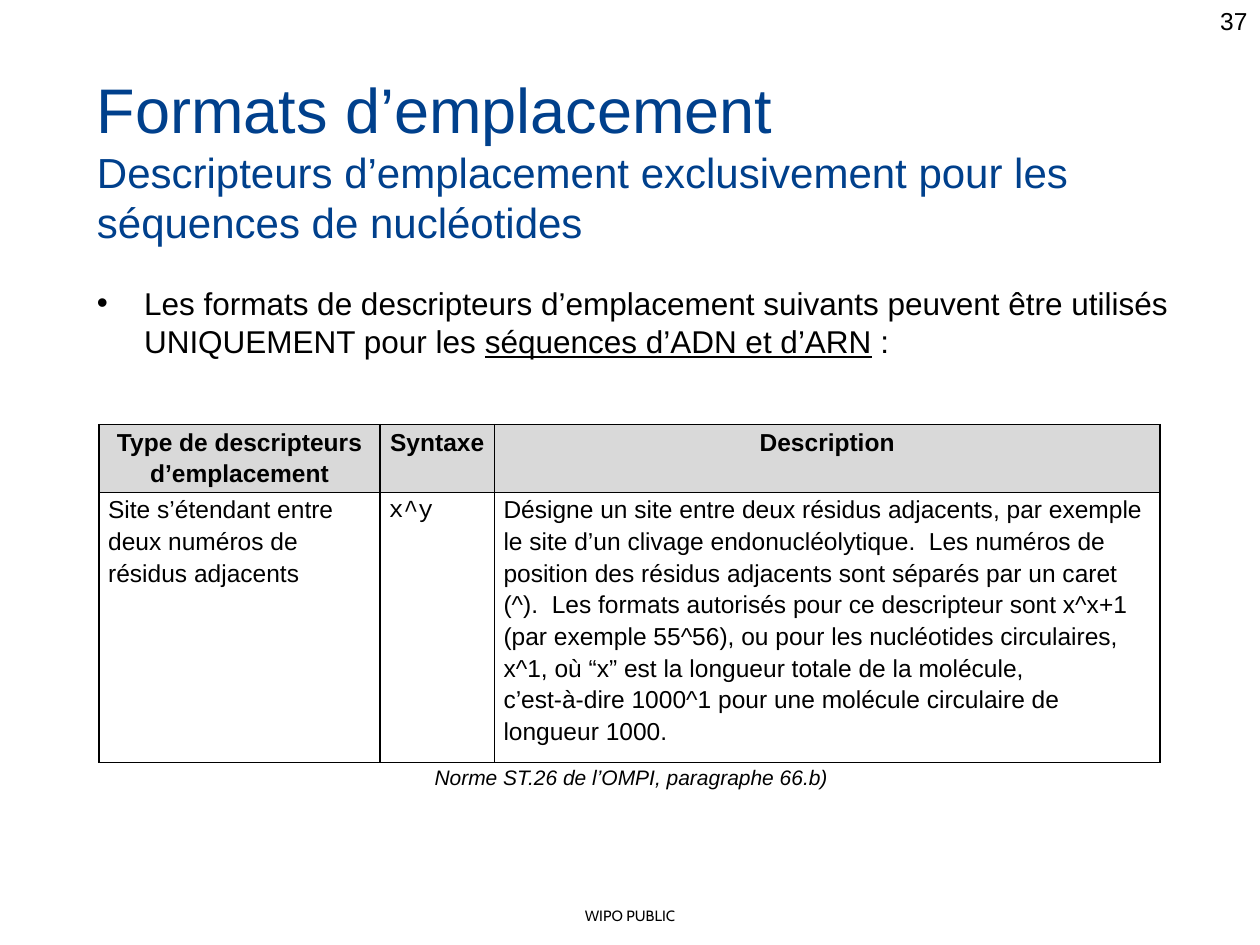
import pptx
import pptx.util
import pptx.dml.color
import pptx.enum.text
import pptx.oxml
import pptx.oxml.ns
from lxml import etree

Cm = pptx.util.Cm
Pt = pptx.util.Pt
ALIGN = pptx.enum.text.PP_ALIGN
ANCHOR = pptx.enum.text.MSO_ANCHOR

HEADINGS = ["Type de descripteurs d’emplacement", "Syntaxe", "Description"]
DETAILS = [
    "Site s’étendant entre deux numéros de résidus adjacents",
    "x^y",
    "Désigne un site entre deux résidus adjacents, par exemple le site d’un clivage "
    "endonucléolytique.  Les numéros de position des résidus adjacents sont séparés par "
    "un caret (^).  Les formats autorisés pour ce descripteur sont x^x+1 (par exemple "
    "55^56), ou pour les nucléotides circulaires, x^1, où “x” est la longueur totale de "
    "la molécule, c’est‑à‑dire 1000^1 pour une molécule circulaire de longueur 1000.",
]


def color(value):
    """Return the colour for a hex string."""
    return pptx.dml.color.RGBColor.from_string(value)


def style(paragraph, size, name="Arial", ink="000000", align=ALIGN.LEFT):
    """Set the font and alignment of a paragraph and return its font."""
    paragraph.alignment = align
    paragraph.space_before = Pt(0)
    font = paragraph.font
    font.size, font.name = Pt(size), name
    font.color.rgb = color(ink)
    return font


def place(shape, box):
    """Move a shape to a box and anchor its wrapped text at the top."""
    shape.left, shape.top, shape.width, shape.height = (Cm(length) for length in box)
    frame = shape.text_frame
    frame.word_wrap = True
    frame.auto_size = pptx.enum.text.MSO_AUTO_SIZE.NONE
    frame.vertical_anchor = ANCHOR.TOP
    return frame


def add_title(slide, box):
    """Fill the title placeholder with a heading and a smaller subheading."""
    frame = place(slide.shapes.title, box)
    frame.text = (
        "Formats d’emplacement\n"
        "Descripteurs d’emplacement exclusivement pour les séquences de nucléotides"
    )
    for paragraph, size in zip(frame.paragraphs, (36, 24)):
        style(paragraph, size, ink="00408C")


def add_body(slide, box):
    """Fill the body placeholder with one bulleted sentence."""
    paragraph = place(slide.placeholders[1], box).paragraphs[0]
    properties = paragraph._p.get_or_add_pPr()
    properties.set("marL", str(Cm(0.95)))
    properties.set("indent", str(-Cm(0.95)))
    etree.SubElement(properties, pptx.oxml.ns.qn("a:buChar")).set("char", "•")
    style(paragraph, 18)
    paragraph.add_run().text = (
        "Les formats de descripteurs d’emplacement suivants peuvent être utilisés "
        "UNIQUEMENT pour les "
    )
    underlined = paragraph.add_run()
    underlined.text = "séquences d’ADN et d’ARN"
    underlined.font.underline = True
    paragraph.add_run().text = " :"


def add_text(slide, box, text, size, name="Arial", align=ALIGN.LEFT, italic=False):
    """Add a text box holding one line."""
    shape = slide.shapes.add_textbox(0, 0, 0, 0)
    paragraph = place(shape, box).paragraphs[0]
    paragraph.text = text
    style(paragraph, size, name, align=align).italic = italic


def add_borders(cell):
    """Draw a thin black line on each side of a cell."""
    properties = cell._tc.get_or_add_tcPr()
    namespace = pptx.oxml.ns.nsdecls("a")
    for position, side in enumerate(("lnL", "lnR", "lnT", "lnB")):
        line = pptx.oxml.parse_xml(
            f'<a:{side} {namespace} w="{Pt(1)}"><a:solidFill>'
            f'<a:srgbClr val="000000"/></a:solidFill></a:{side}>'
        )
        properties.insert(position, line)


def fill_cell(cell, text, heading, name):
    """Write and format one table cell."""
    cell.margin_left = cell.margin_right = Cm(0.18)
    cell.margin_top = cell.margin_bottom = 0
    cell.text = text
    paragraph = cell.text_frame.paragraphs[0]
    align = ALIGN.CENTER if heading else ALIGN.LEFT
    style(paragraph, 14, name, align=align).bold = heading
    paragraph.line_spacing = 1.15
    if heading:
        cell.fill.solid()
        cell.fill.fore_color.rgb = color("D9D9D9")
    else:
        cell.fill.background()
    add_borders(cell)


def add_formats_table(slide, left, top, widths, heights):
    """Add the table of location formats."""
    table = slide.shapes.add_table(
        len(heights), len(widths), Cm(left), Cm(top), Cm(sum(widths)), Cm(sum(heights))
    ).table
    table.first_row = table.horz_banding = False
    for column, width in zip(table.columns, widths):
        column.width = Cm(width)
    for row, height, texts in zip(table.rows, heights, (HEADINGS, DETAILS)):
        row.height = Cm(height)
        for cell, text in zip(row.cells, texts):
            name = "Courier New" if text == "x^y" else "Arial"
            fill_cell(cell, text, texts is HEADINGS, name)


def main():
    """Build the slide and save it."""
    presentation = pptx.Presentation()
    presentation.slide_width, presentation.slide_height = Cm(25.4), Cm(19.05)
    slide = presentation.slides.add_slide(presentation.slide_layouts[1])
    add_text(slide, (0, 18.16, 25.4, 0.61), "WIPO PUBLIC", 8.5, "Cabin", ALIGN.CENTER)
    add_text(slide, (19.48, 0, 5.92, 1.32), "37", 14, align=ALIGN.RIGHT)
    add_title(slide, (1.7, 1.3, 22.86, 3.18))
    add_body(slide, (1.7, 5.6, 22.86, 13.28))
    add_text(slide, (8.51, 15.29, 12.7, 0.76), "Norme ST.26 de l’OMPI, paragraphe 66.b)", 12, italic=True)
    add_formats_table(slide, 2, 8.56, (5.66, 2.31, 13.41), (1.37, 5.44))
    presentation.save("out.pptx")


if __name__ == "__main__":
    main()
